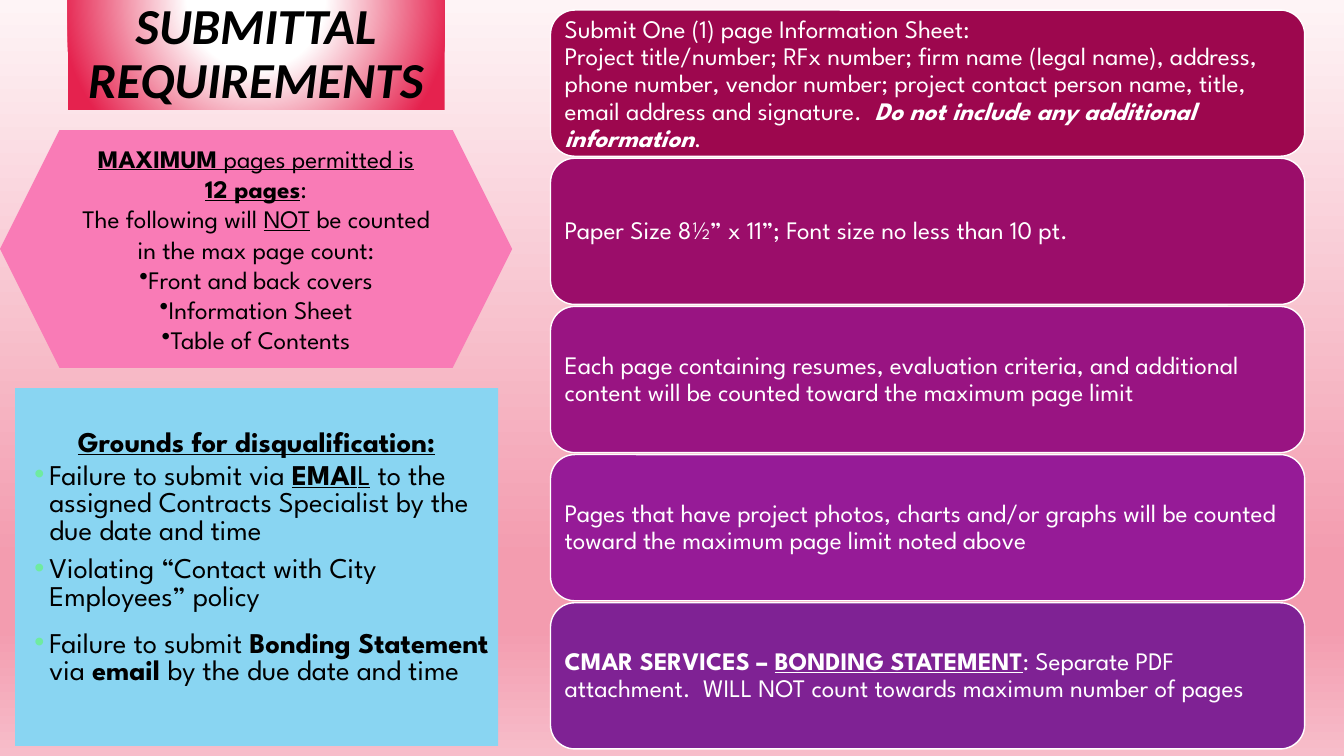
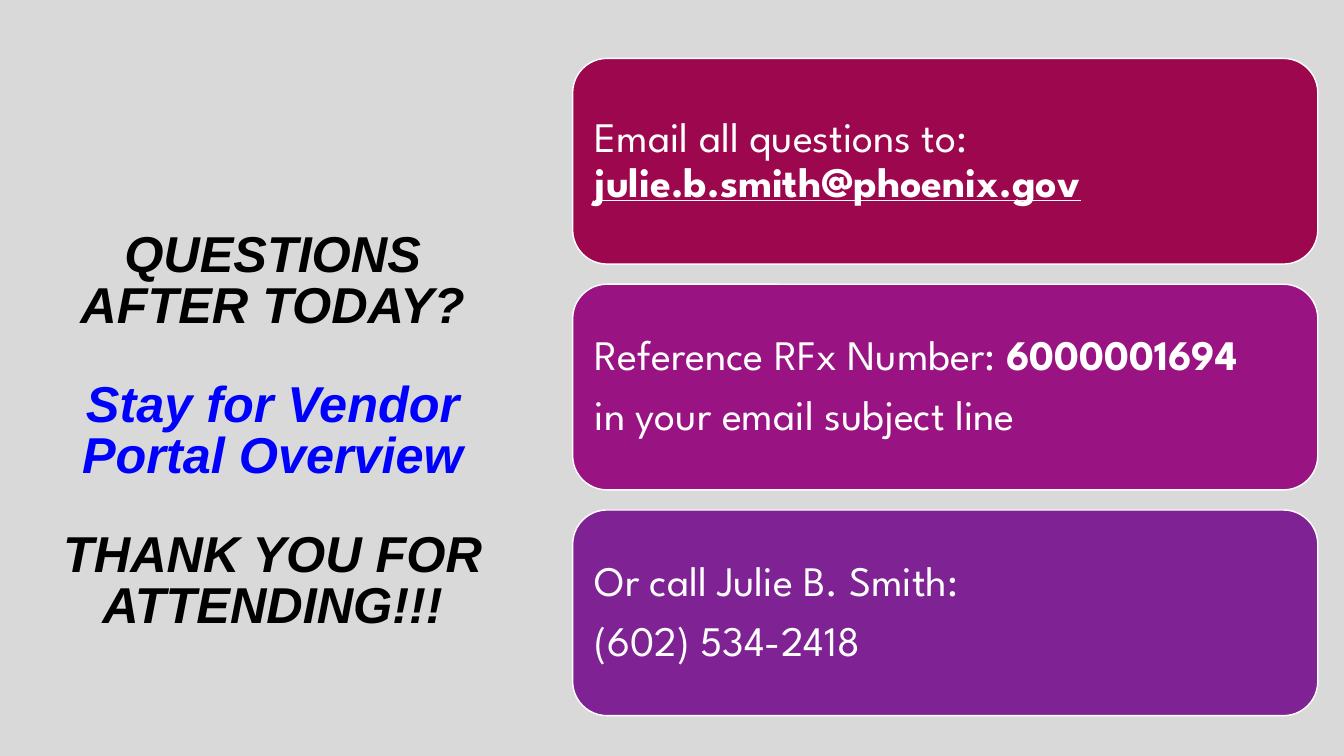
from dataclasses import dataclass

from lxml import etree
from pptx import Presentation
from pptx.dml.color import RGBColor
from pptx.enum.shapes import MSO_SHAPE
from pptx.enum.text import MSO_ANCHOR, MSO_AUTO_SIZE, PP_ALIGN
from pptx.oxml.ns import qn
from pptx.util import Inches, Pt

CENTER, LEFT = PP_ALIGN.CENTER, PP_ALIGN.LEFT
MIDDLE, TOP = MSO_ANCHOR.MIDDLE, MSO_ANCHOR.TOP
NO_AUTOFIT = MSO_AUTO_SIZE.NONE
HEXAGON, ROUNDED = MSO_SHAPE.HEXAGON, MSO_SHAPE.ROUNDED_RECTANGLE
TITLE_AND_CONTENT, TITLE_ONLY = 1, 5


@dataclass(frozen=True)
class Theme:
    body_font: str = "League Spartan"
    title_size: float = 36
    text_size: float = 18
    list_size: float = 20.4
    contact_size: float = 30
    black: str = "000000"
    white: str = "FFFFFF"
    blue: str = "0000FF"
    gray: str = "D9D9D9"
    red: str = "E5224E"
    pink: str = "F97BB6"
    sky: str = "89D5F2"
    bullet: str = "6FEBA0"
    cards: tuple = ("9D074E", "9B0D6A", "991482", "961B97", "7F2294")
    backdrop: tuple = ((0, "FEF4F6"), (74, "F39CAF"), (83, "F39CAF"), (100, "F7BDCA"))


THEME = Theme()
STYLE_FLAGS = {"b": "bold", "i": "italic", "u": "underline"}


# Fills and paragraph XML
def add_node(parent, tag, **attributes):
    node = etree.SubElement(parent, qn(tag))
    for name, value in attributes.items():
        node.set(name, str(value))
    return node


def set_gradient(fill, owner, stops, angle=None, focus=None):
    """Linear when an angle is given, circular around the focus box otherwise."""
    fill.gradient()
    gradient = owner.element.xpath(".//a:gradFill")[0]
    for child in list(gradient):
        gradient.remove(child)
    stop_list = add_node(gradient, "a:gsLst")
    for position, color in stops:
        stop = add_node(stop_list, "a:gs", pos=position * 1000)
        add_node(stop, "a:srgbClr", val=color)
    if focus is None:
        add_node(gradient, "a:lin", ang=angle * 60000, scaled=0)
    else:
        circle = add_node(gradient, "a:path", path="circle")
        sides = {side: part * 1000 for side, part in zip("ltrb", focus)}
        add_node(circle, "a:fillToRect", **sides)


def set_solid(fill, color):
    fill.solid()
    fill.fore_color.rgb = RGBColor.from_string(color)


def set_bullet(para, bullet, color, margin, indent):
    properties = para._p.get_or_add_pPr()
    properties.set("marL", str(Inches(margin)))
    properties.set("indent", str(Inches(indent)))
    if not bullet:
        add_node(properties, "a:buNone")
        return
    if color:
        add_node(add_node(properties, "a:buClr"), "a:srgbClr", val=color)
    add_node(properties, "a:buChar", char="•")


# Text
def write(box, paragraphs, size, color=THEME.black, font=THEME.body_font,
          anchor=MIDDLE, insets=(0.1, 0.05, 0.1, 0.05), **shared):
    """Each paragraph is (spans, format); a span is (text, style flags)."""
    frame = box.text_frame
    left, top, right, bottom = map(Inches, insets)
    settings = {"word_wrap": True, "auto_size": NO_AUTOFIT, "vertical_anchor": anchor,
                "margin_left": left, "margin_top": top,
                "margin_right": right, "margin_bottom": bottom}
    for name, value in settings.items():
        setattr(frame, name, value)
    for index, (spans, own) in enumerate(paragraphs):
        para = frame.paragraphs[0] if index == 0 else frame.add_paragraph()
        look = {"alignment": LEFT, "line_spacing": 1.0, "space_before": Pt(0),
                "space_after": Pt(0), "bullet": False, "bullet_color": None,
                "margin": 0, "indent": 0, "color": color, **shared, **own}
        set_bullet(para, look["bullet"], look["bullet_color"], look["margin"], look["indent"])
        for name in ("alignment", "line_spacing", "space_before", "space_after"):
            setattr(para, name, look[name])
        for text, flags in spans:
            span = para.add_run()
            span.text = text
            span.font.name = font
            span.font.size = Pt(size)
            span.font.color.rgb = RGBColor.from_string(look["color"])
            for flag, name in STYLE_FLAGS.items():
                setattr(span.font, name, flag in flags)


# Shapes
def place(box, left, top, width, height):
    bounds = {"left": left, "top": top, "width": width, "height": height}
    for name, value in bounds.items():
        setattr(box, name, Inches(value))
    return box


def add_panel(page, kind, bounds, color, outline=None):
    panel = page.shapes.add_shape(kind, *map(Inches, bounds))
    panel.shadow.inherit = False
    set_solid(panel.fill, color)
    if outline:
        set_solid(panel.line.fill, outline)
        panel.line.width = Pt(1)
    else:
        panel.line.fill.background()
    return panel


def add_cards(page, bounds, gap, texts, colors, size, inset):
    """Stack of equal cards; bounds are those of the first one."""
    left, top, width, height = bounds
    for index, (paragraphs, color) in enumerate(zip(texts, colors)):
        card_top = top + index * (height + gap)
        card = add_panel(page, ROUNDED, (left, card_top, width, height), color, THEME.white)
        write(card, paragraphs, size, THEME.white, insets=(inset,) * 4,
              line_spacing=0.9, space_after=Pt(size * 0.35))


# Slides
def build_requirements(deck):
    page = deck.slides.add_slide(deck.slide_layouts[TITLE_AND_CONTENT])
    set_gradient(page.background.fill, page, THEME.backdrop, angle=90)

    # Title
    title = place(page.shapes.title, 0.67, 0, 3.74, 1.09)
    set_gradient(title.fill, title, ((0, THEME.white), (35, THEME.white), (100, THEME.red)),
                 focus=(50, -80, 50, 180))
    write(title, [([("SUBMITTAL REQUIREMENTS", "bi")], {})], THEME.title_size,
          font="Calibri", alignment=CENTER, line_spacing=0.9, space_after=Pt(6))

    # Page limit
    limit = add_panel(page, HEXAGON, (0, 1.29, 5.08, 2.36), THEME.pink)
    uncounted = ("Front and back covers", "Information Sheet", "Table of Contents")
    write(limit, [
        ([("MAXIMUM", "bu"), (" pages permitted is", "u")], {}),
        ([("12 pages", "bu"), (":", "")], {}),
        ([("The following will ", ""), ("NOT", "u"),
          (" be counted in the max page count:", "")], {}),
        *[([(item, "")], {"bullet": True}) for item in uncounted],
    ], THEME.text_size, alignment=CENTER)

    # Disqualification list
    grounds = place(page.placeholders[1], 0.15, 3.85, 4.79, 3.55)
    set_solid(grounds.fill, THEME.sky)
    item = {"bullet": True, "bullet_color": THEME.bullet, "margin": 0.29,
            "indent": -0.15, "space_before": Pt(2)}
    write(grounds, [
        ([("Grounds for disqualification:", "bu")],
         {"alignment": CENTER, "space_after": Pt(2)}),
        ([("Failure to submit via ", ""), ("EMAI", "bu"), ("L", "u"),
          (" to the assigned Contracts Specialist by the due date and time", "")],
         {**item, "space_after": Pt(6)}),
        ([("Violating “Contact with City Employees” policy", "")],
         {**item, "space_after": Pt(12)}),
        ([("Failure to submit ", ""), ("Bonding Statement", "b"), (" via ", ""),
          ("email ", "b"), ("by the due date and time", "")], item),
    ], THEME.list_size, anchor=TOP, insets=(0.05, 0.42, 0.05, 0.05), line_spacing=0.8)

    # Requirement cards
    add_cards(page, (5.46, 0.1, 7.48, 1.45), 0.02, [
        [([("Submit One (1) page Information Sheet:", "")],
          {"line_spacing": 1.0, "space_after": Pt(0)}),
         ([("Project title/number; RFx number; firm name (legal name), address, phone number, "
            "vendor number; project contact person name, title, email address and "
            "signature.  ", ""),
           ("Do not include any additional information", "bi"), (".", "")], {})],
        [([("Paper Size 8½” x 11”; Font size no less than 10 pt.", "")], {})],
        [([("Each page containing resumes, evaluation criteria, and additional content "
            "will be counted toward the maximum page limit", "")], {})],
        [([("Pages that have project photos, charts and/or graphs will be counted "
            "toward the maximum page limit noted above", "")], {})],
        [([("CMAR SERVICES – ", "b"), ("BONDING STATEMENT", "bu"),
           (": Separate PDF attachment.  WILL NOT count towards maximum number of pages", "")],
          {})],
    ], THEME.cards, THEME.text_size, 0.07)


def build_questions(deck):
    page = deck.slides.add_slide(deck.slide_layouts[TITLE_ONLY])
    set_solid(page.background.fill, THEME.gray)

    # Closing message
    gap = {"space_before": Pt(34.6)}
    write(place(page.shapes.title, 0.45, 1.92, 4.51, 4.75), [
        ([("QUESTIONS AFTER TODAY?", "bi")], {}),
        ([("Stay for Vendor Portal Overview", "bi")], {**gap, "color": THEME.blue}),
        ([("THANK YOU FOR ATTENDING!!!", "bi")], gap),
    ], THEME.title_size, font="Arial", alignment=CENTER, line_spacing=0.84)

    # Contact cards
    add_cards(page, (5.68, 0.58, 7.39, 2.04), 0.2, [
        [([("Email all questions to: ", ""), ("julie.b.smith@phoenix.gov", "bu")], {})],
        [([("Reference RFx Number: ", ""), ("6000001694", "b")], {}),
         ([("in your email subject line", "")], {})],
        [([("Or call Julie B. Smith:", "")], {}), ([("(602) 534-2418", "")], {})],
    ], THEME.cards[::2], THEME.contact_size, 0.12)


def main():
    deck = Presentation()
    deck.slide_width, deck.slide_height = Inches(13.33), Inches(7.5)
    build_requirements(deck)
    build_questions(deck)
    deck.save("out.pptx")


if __name__ == "__main__":
    main()
